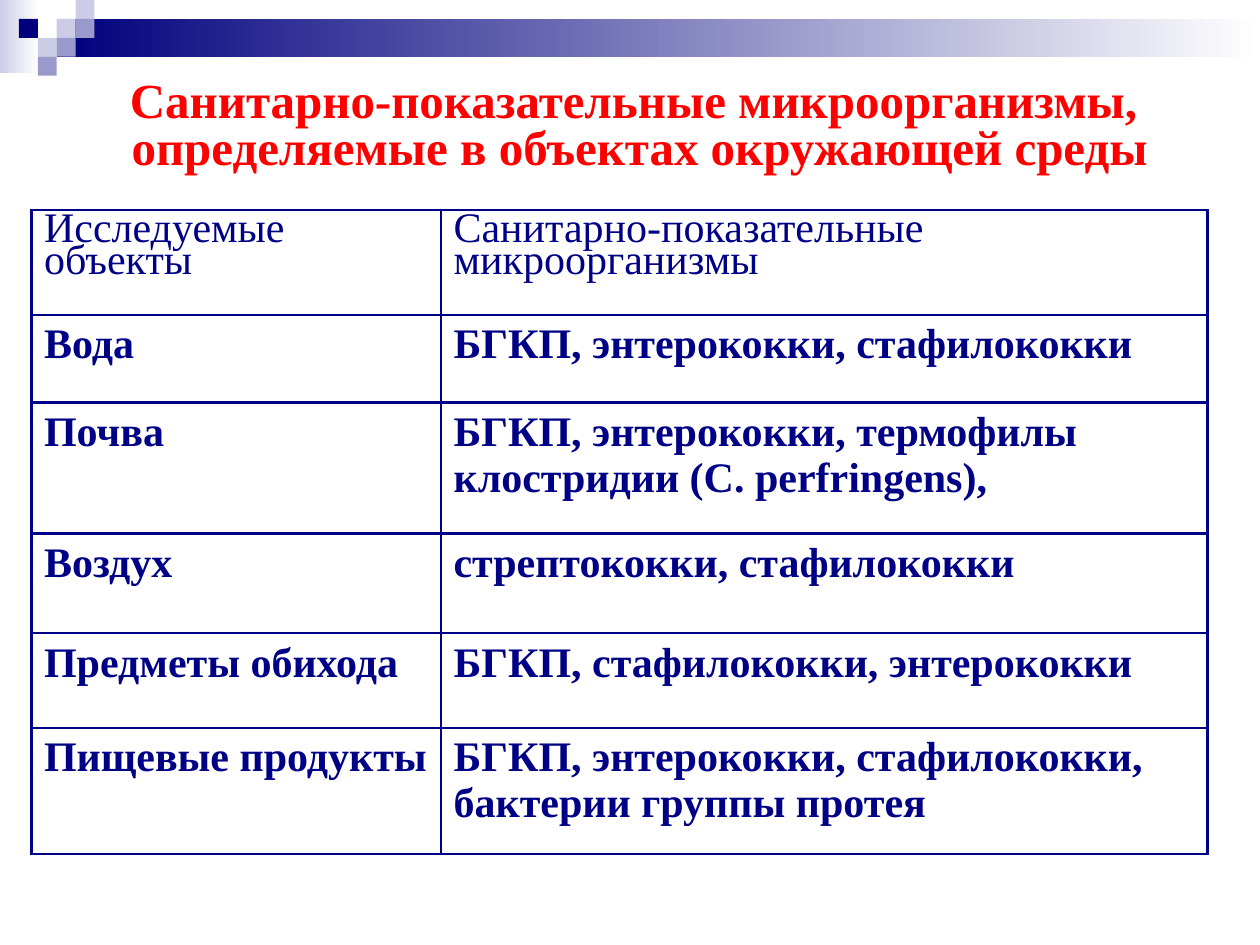
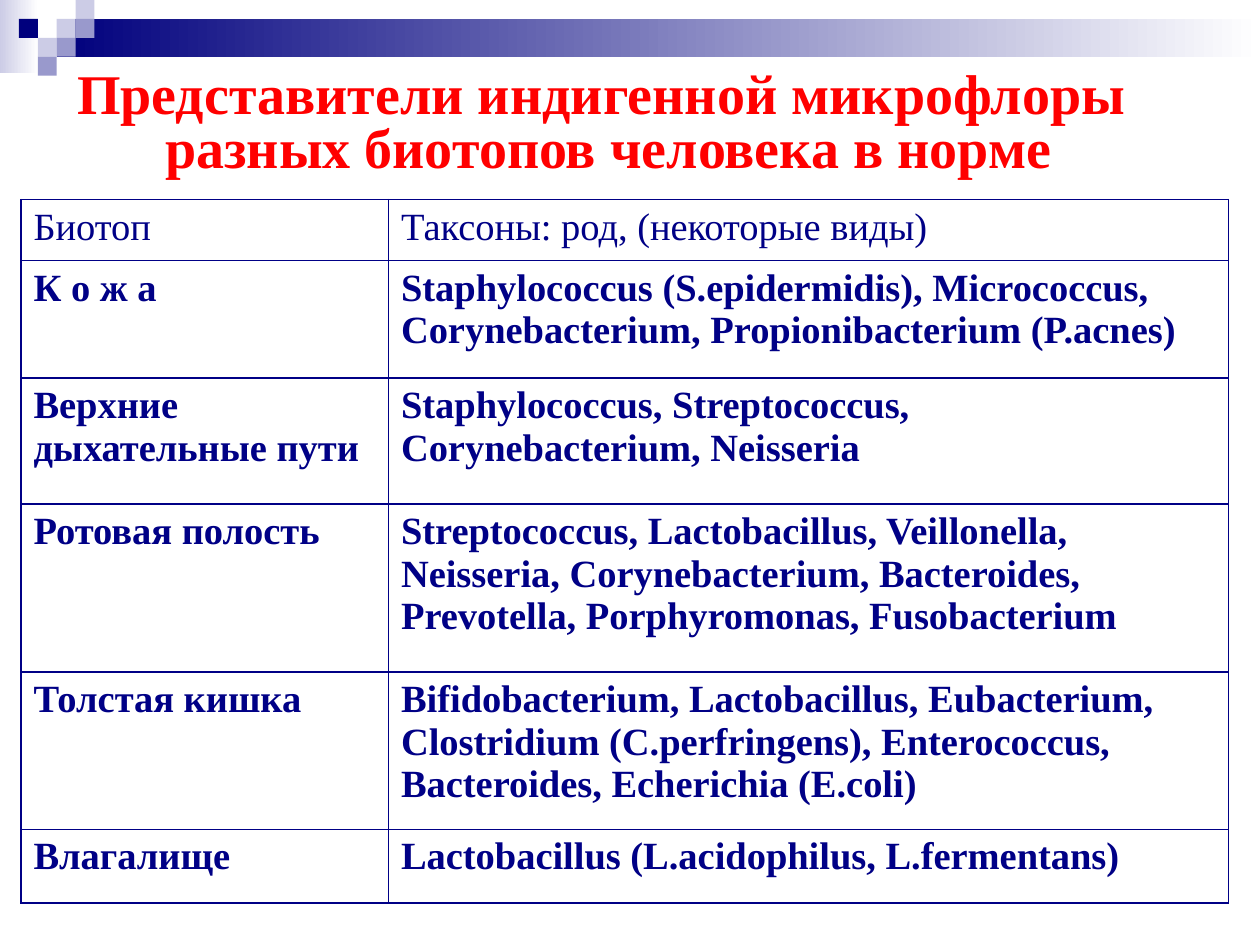
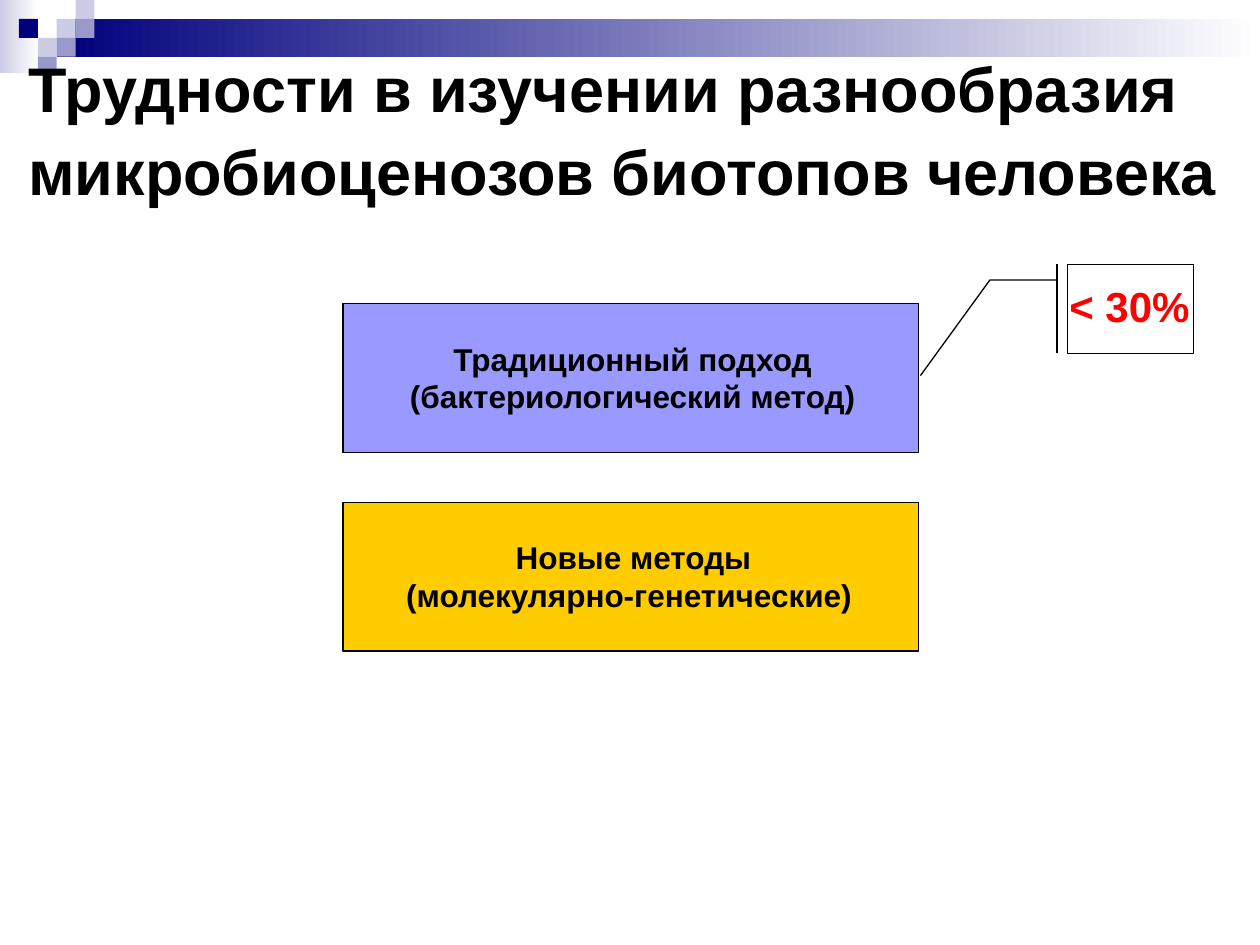
from lxml import etree
from pptx import Presentation
from pptx.dml.color import RGBColor
from pptx.enum.shapes import MSO_SHAPE
from pptx.enum.text import MSO_ANCHOR, MSO_AUTO_SIZE, PP_ALIGN
from pptx.oxml.ns import qn
from pptx.util import Pt

RECT = MSO_SHAPE.RECTANGLE
CALLOUT = MSO_SHAPE.LINE_CALLOUT_2_BORDER_AND_ACCENT_BAR
LEFT, CENTER = PP_ALIGN.LEFT, PP_ALIGN.CENTER
MIDDLE = MSO_ANCHOR.MIDDLE
FIT, FIXED = MSO_AUTO_SIZE.SHAPE_TO_FIT_TEXT, MSO_AUTO_SIZE.NONE

SANS, SERIF = "Arial", "Times New Roman"
COLORS = {
    "navy": "00007D", "mid": "9999CC", "pale": "CCCCE6", "white": "FFFFFF",
    "red": "FF0000", "ink": "000086", "black": "000000",
    "violet": "9999FF", "gold": "FFCC00",
}

UNIT = 10.8
BANDS = [
    ((0, 0, 22, 42), ("pale", "white")),
    ((3 * UNIT, UNIT, 720 - 3 * UNIT, 2 * UNIT), ("navy", "white")),
]
TILES = [
    (3, 1, "pale"), (4, 0, "pale"), (4, 1, "mid"), (2, 2, "pale"),
    (1, 1, "navy"), (3, 2, "mid"), (2, 3, "mid"),
]

TABLES = [
    {
        "title": "Санитарно-показательные микроорганизмы, \n"
                 "определяемые в объектах окружающей среды",
        "place": (66, 42.5, 599, 61), "head": 28,
        "at": (18, 120), "cols": (234, 438), "rows": (60, 50, 75, 57, 54, 72),
        "size": 24, "line": 1.5, "lead": 0.7,
        "cells": [
            ("Исследуемые\nобъекты", "Санитарно-показательные\nмикроорганизмы"),
            ("Вода", "БГКП, энтерококки, стафилококки"),
            ("Почва", "БГКП, энтерококки, термофилы\nклостридии (С. perfringens),"),
            ("Воздух", "стрептококки, стафилококки"),
            ("Предметы обихода", "БГКП, стафилококки, энтерококки"),
            ("Пищевые продукты",
             "БГКП, энтерококки, стафилококки, бактерии группы протея"),
        ],
    },
    {
        "title": "Представители индигенной микрофлоры \n"
                 "разных биотопов человека в норме",
        "place": (36, 37.5, 623.5, 68.5), "head": 32,
        "at": (12, 114), "cols": (210, 480), "rows": (35, 67, 72, 96, 90, 42),
        "size": 22, "line": 1, "lead": 1,
        "cells": [
            ("Биотоп", "Таксоны: род, (некоторые виды)"),
            ("К о ж а", "Staphylococcus (S.epidermidis), Micrococcus, "
                        "Corynebacterium, Propionibacterium (P.acnes)"),
            ("Верхние дыхательные пути",
             "Staphylococcus, Streptococcus,\vCorynebacterium, Neisseria"),
            ("Ротовая полость",
             "Streptococcus, Lactobacillus, Veillonella, Neisseria, "
             "Corynebacterium, Bacteroides, Prevotella, Porphyromonas, "
             "Fusobacterium"),
            ("Толстая кишка",
             "Bifidobacterium, Lactobacillus, Eubacterium, Clostridium "
             "(C.perfringens), Enterococcus, Bacteroides, Echerichia (E.coli)"),
            ("Влагалище", "Lactobacillus (L.acidophilus, L.fermentans)"),
        ],
    },
]

TOPIC = ("Трудности в изучении разнообразия", "микробиоценозов биотопов человека")
METHODS = [
    ("violet", 173.5, 226, "Традиционный подход \n(бактериологический метод) "),
    ("gold", 287, 224, "Новые методы\n(молекулярно-генетические) "),
]
SHARE = "< 30%"
BENDS = (0.176, -0.083, 0.176, -0.615, 1.249, -1.167)


def rgb(name):
    return RGBColor.from_string(COLORS[name])


def points(*nums):
    return [Pt(n) for n in nums]


def style(para, face, size, color, bold=True, align=LEFT, lead=None):
    font = para.font
    font.name, font.size, font.bold = face, Pt(size), bold
    font.color.rgb = rgb(color)
    para.alignment = align
    if lead:
        para.line_spacing = lead


def add_box(slide, place, fill, line=None, kind=RECT):
    box = slide.shapes.add_shape(kind, *points(*place))
    box.shadow.inherit = False
    if isinstance(fill, tuple):
        box.fill.gradient()
        box.fill.gradient_angle = 0
        for stop, name in zip(box.fill.gradient_stops, fill):
            stop.color.rgb = rgb(name)
    else:
        box.fill.solid()
        box.fill.fore_color.rgb = rgb(fill)
    if line:
        box.line.color.rgb = rgb(line)
        box.line.width = Pt(0.75)
    else:
        box.line.fill.background()
    return box


def add_label(slide, place, text, size, color, align=CENTER):
    frame = slide.shapes.add_textbox(*points(*place)).text_frame
    frame.word_wrap = False
    frame.auto_size = FIT
    frame.text = text
    for para in frame.paragraphs:
        style(para, SANS, size, color, align=align)


def add_decor(slide, layout):
    parts = BANDS + [((c * UNIT, r * UNIT, UNIT, UNIT), name)
                     for c, r, name in TILES]
    for num, (place, fill) in enumerate(parts, 101):
        part = add_box(slide, place, fill).element
        part.nvSpPr.cNvPr.set("id", str(num))
        layout.shapes.element.append(part)


def set_title(slide, place, wrap, fit):
    title = slide.shapes.title
    title.left, title.top, title.width, title.height = points(*place)
    frame = title.text_frame
    frame.vertical_anchor = MIDDLE
    frame.word_wrap = wrap
    frame.auto_size = fit
    return frame


def add_border(cell, width):
    props = cell._tc.get_or_add_tcPr()
    for side in ("lnL", "lnR", "lnT", "lnB"):
        line = etree.SubElement(props, qn("a:" + side), w=str(Pt(width)))
        fill = etree.SubElement(line, qn("a:solidFill"))
        etree.SubElement(fill, qn("a:srgbClr"), val=COLORS["ink"])


def fill_table(slide, data):
    frame = set_title(slide, data["place"], False, FIT)
    frame.text = data["title"]
    for para in frame.paragraphs:
        style(para, SERIF, data["head"], "red", align=CENTER, lead=0.8)
    rows, cols = data["rows"], data["cols"]
    place = points(*data["at"], sum(cols), sum(rows))
    table = slide.shapes.add_table(len(rows), len(cols), *place).table
    table.first_row = table.horz_banding = False
    for col, width in zip(table.columns, cols):
        col.width = Pt(width)
    for r, texts in enumerate(data["cells"]):
        table.rows[r].height = Pt(rows[r])
        for c, text in enumerate(texts):
            cell = table.cell(r, c)
            add_border(cell, data["line"])
            cell.fill.background()
            cell.text = text
            for para in cell.text_frame.paragraphs:
                style(para, SERIF, data["size"], "ink", r > 0,
                      lead=data["lead"] if r == 0 else None)


def fill_methods(slide):
    para = set_title(slide, (9, 20, 711, 108), True, FIXED).paragraphs[0]
    style(para, SANS, 40, "black")
    for num, text in enumerate(TOPIC):
        if num:
            para.add_line_break()
        run = para.add_run()
        run.text = text
        run.font.size = Pt(36)
    para.add_run().text = " "
    for fill, top, left, text in METHODS:
        add_box(slide, (196, top, 329, 85), fill, "black")
        add_label(slide, (left, top + 17, 276, 50), text, 18, "black")
    note = add_box(slide, (610, 151, 72, 51), "white", "black", CALLOUT)
    for num, bend in enumerate(BENDS):
        note.adjustments[num] = bend
    add_label(slide, (604, 157, 83.5, 36), SHARE, 24, "red", LEFT)


def main():
    deck = Presentation()
    deck.slide_width, deck.slide_height = points(720, 540)
    layout = deck.slide_layouts[5]
    slides = [deck.slides.add_slide(layout) for _ in range(3)]
    add_decor(slides[0], layout)
    for slide, data in zip(slides, TABLES):
        fill_table(slide, data)
    fill_methods(slides[2])
    deck.save("out.pptx")


if __name__ == "__main__":
    main()
